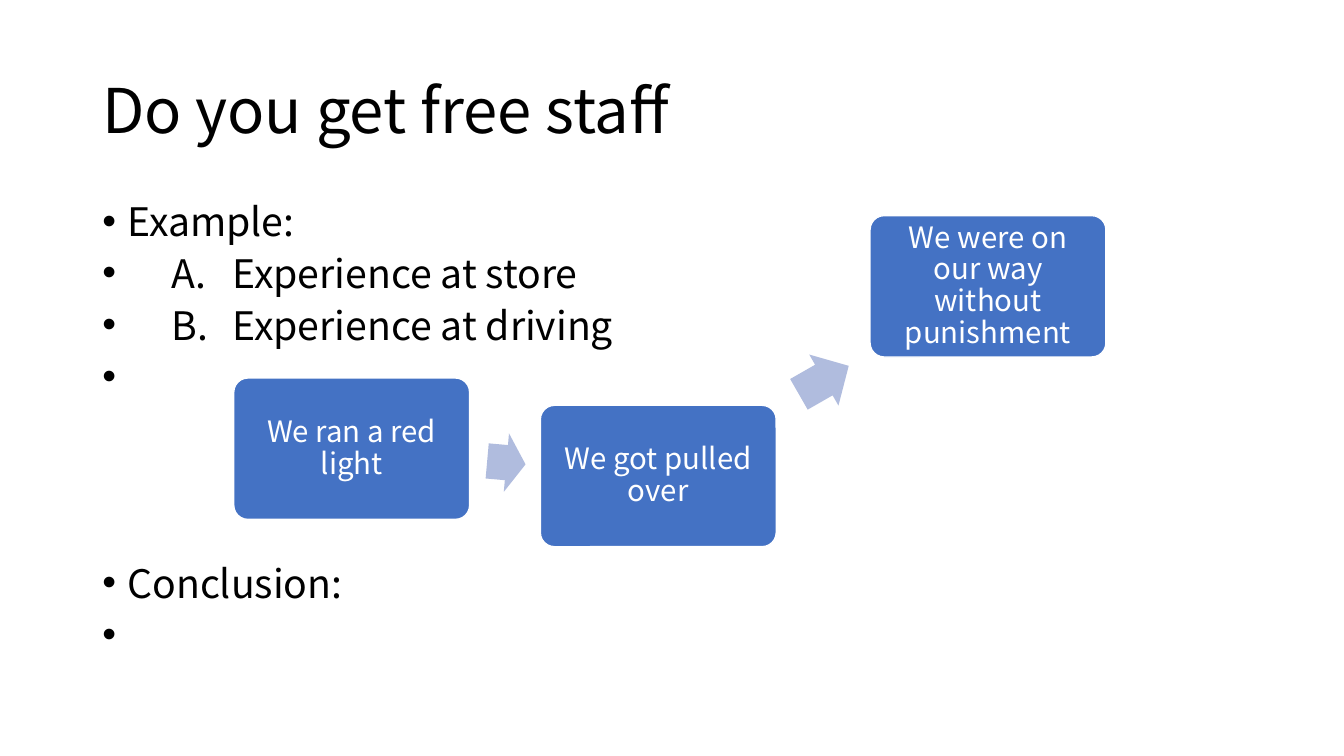
from lxml import etree
from pptx import Presentation
from pptx.dml.color import RGBColor
from pptx.enum.shapes import MSO_SHAPE
from pptx.enum.text import MSO_ANCHOR, PP_ALIGN
from pptx.oxml.ns import qn
from pptx.util import Pt

ROUNDED = MSO_SHAPE.ROUNDED_RECTANGLE
ARROW = MSO_SHAPE.RIGHT_ARROW
MIDDLE = MSO_ANCHOR.MIDDLE
CENTER = PP_ALIGN.CENTER

BLACK = RGBColor(0x00, 0x00, 0x00)
WHITE = RGBColor(0xFF, 0xFF, 0xFF)
BLUE = RGBColor(0x44, 0x72, 0xC4)
PALE_BLUE = RGBColor(0xB0, 0xBC, 0xDE)
FONT = "Noto Sans CJK SC"

BULLET_INDENT = 18
LETTER_INDENT = 49.5
LETTER_TAB = 93
OUTLINE_GAP = 10
CONCLUSION_GAP = 120.5
STEP_SIZE = (168.5, 101)

# text, left indent, space before
OUTLINE = [
    ("Example:", BULLET_INDENT, 0),
    ("A.\tExperience at store", LETTER_INDENT, OUTLINE_GAP),
    ("B.\tExperience at driving", LETTER_INDENT, OUTLINE_GAP),
    (" ", BULLET_INDENT, OUTLINE_GAP),
    ("Conclusion:", BULLET_INDENT, CONCLUSION_GAP),
    (" ", BULLET_INDENT, OUTLINE_GAP),
]
# text, offset from the region's corner
STEPS = [
    ("We ran a red light", 0, 116),
    ("We got pulled over", 219, 135.5),
    ("We were on our way without punishment", 454.5, 0),
]
# offset from the region's corner, width, height, rotation
ARROWS = [
    (181, 155.5, 27.5, 42, 5.1),
    (401, 96.5, 41, 42, 330.2),
]


def set_attributes(target, formats):
    for attribute, value in formats.items():
        setattr(target, attribute, value)


def style_paragraph(paragraph, size, color, **formats):
    set_attributes(paragraph, formats)
    set_attributes(paragraph.font, {"name": FONT, "size": Pt(size)})
    paragraph.font.color.rgb = color
    for run in paragraph.runs:
        etree.SubElement(run.font._element, qn("a:ea"), typeface=FONT)


def add_text_frame(slide, left, top, width, height):
    frame = slide.shapes.add_textbox(Pt(left), Pt(top), Pt(width), Pt(height)).text_frame
    frame.word_wrap = True
    return frame


def add_bullet(paragraph, indent):
    """Hang a bullet at the box edge, with a tab stop for the text after a letter."""
    properties = paragraph._p.get_or_add_pPr()
    properties.set("marL", str(Pt(indent)))
    properties.set("indent", str(-Pt(indent)))
    etree.SubElement(properties, qn("a:buFont"), typeface="Arial")
    etree.SubElement(properties, qn("a:buChar"), char="•")
    if indent == LETTER_INDENT:
        tabs = etree.SubElement(properties, qn("a:tabLst"))
        etree.SubElement(tabs, qn("a:tab"), pos=str(Pt(LETTER_TAB)), algn="l")


def add_title(slide, left, top, width, height):
    frame = add_text_frame(slide, left, top, width, height)
    frame.vertical_anchor = MIDDLE
    frame.text = "Do you get free staff"
    style_paragraph(frame.paragraphs[0], 44, BLACK, line_spacing=0.9)


def add_outline(slide, left, top, width, height):
    frame = add_text_frame(slide, left, top, width, height)
    for number, (text, indent, gap) in enumerate(OUTLINE):
        paragraph = frame.add_paragraph() if number else frame.paragraphs[0]
        paragraph.text = text
        add_bullet(paragraph, indent)
        style_paragraph(paragraph, 28, BLACK, line_spacing=0.8, space_before=Pt(gap))


def add_filled_shape(slide, kind, box, fill, adjustments):
    shape = slide.shapes.add_shape(kind, *(Pt(length) for length in box))
    shape.shadow.inherit = False
    shape.fill.solid()
    shape.fill.fore_color.rgb = fill
    for number, value in enumerate(adjustments):
        shape.adjustments[number] = value
    return shape


def add_step(slide, left, top, text):
    step = add_filled_shape(slide, ROUNDED, (left, top, *STEP_SIZE), BLUE, [0.1])
    step.line.color.rgb = WHITE
    step.line.width = Pt(1)
    frame = step.text_frame
    sides = ("left", "top", "right", "bottom")
    set_attributes(frame, {f"margin_{side}": Pt(9.5) for side in sides})
    set_attributes(frame, {"word_wrap": True, "vertical_anchor": MIDDLE, "text": text})
    style_paragraph(frame.paragraphs[0], 21, WHITE, line_spacing=0.9, alignment=CENTER)


def add_process(slide, left, top):
    for text, x, y in STEPS:
        add_step(slide, left + x, top + y, text)
    for x, y, width, height, rotation in ARROWS:
        box = (left + x, top + y, width, height)
        arrow = add_filled_shape(slide, ARROW, box, PALE_BLUE, [0.6, 0.5])
        arrow.line.fill.background()
        arrow.rotation = rotation


def main():
    presentation = Presentation()
    presentation.slide_width = Pt(960)
    presentation.slide_height = Pt(540)
    slide = presentation.slides.add_slide(presentation.slide_layouts[6])
    add_title(slide, 66, 29, 828, 104)
    add_outline(slide, 66, 144, 828, 342.5)
    add_process(slide, 167, 154)
    presentation.save("out.pptx")


if __name__ == "__main__":
    main()
